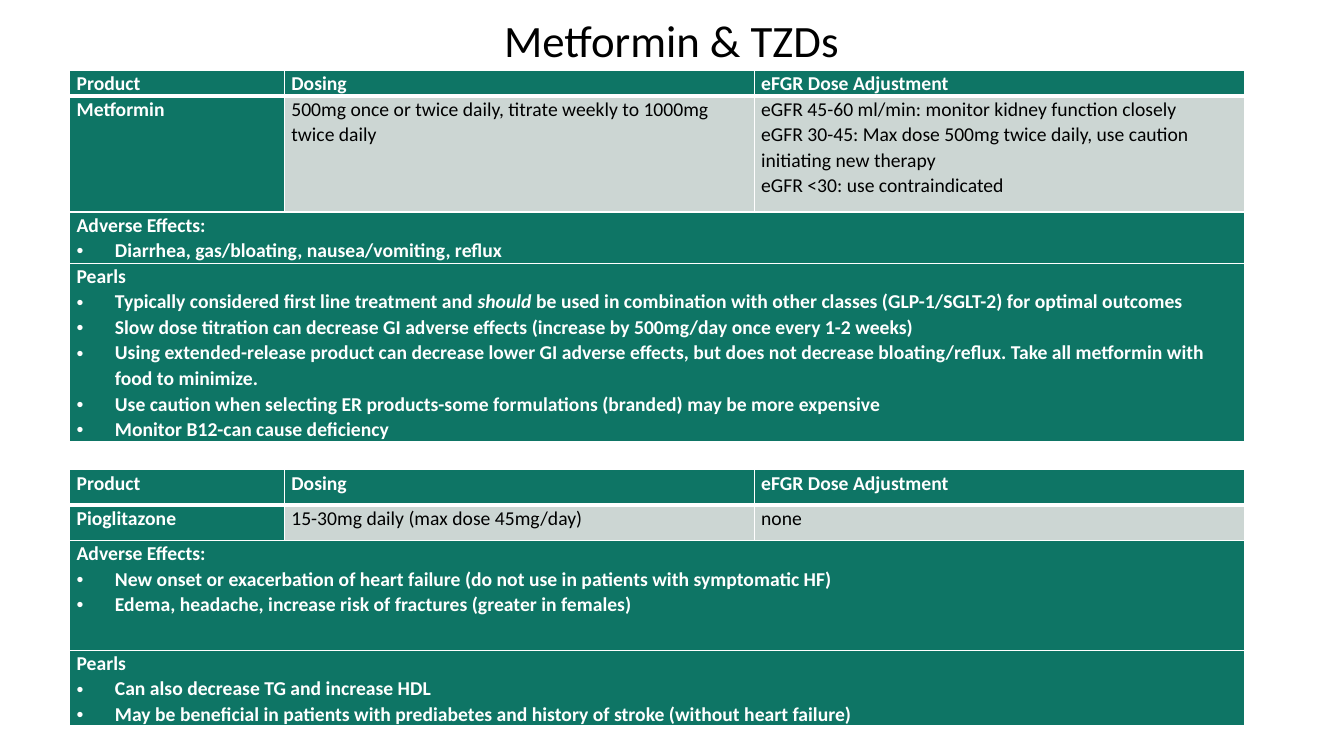
import pptx
import pptx.dml.color
import pptx.enum.text
import pptx.oxml
import pptx.oxml.ns
import pptx.util

WIDTH, HEIGHT = 13.33, 7.5
TABLE_LEFT = 0.69
COLUMNS = (2.13, 4.66, 4.86)
GREEN, GRAY, WHITE, BLACK = "0E7565", "CCD6D3", "FFFFFF", "000000"
HEADINGS = ("Product", "Dosing", "eFGR Dose Adjustment")
INDENT = pptx.util.Inches(0.38)

METFORMIN = (
    "Metformin",
    ["500mg once or twice daily, titrate weekly to 1000mg twice daily"],
    ["eGFR 45-60 ml/min: monitor kidney function closely",
     "eGFR 30-45: Max dose 500mg twice daily, use caution initiating new therapy",
     "eGFR <30: use contraindicated"],
)
METFORMIN_NOTES = {
    "Adverse Effects:": ["Diarrhea, gas/bloating, nausea/vomiting, reflux"],
    "Pearls": [
        ("Typically considered first line treatment and ", "should",
         " be used in combination with other classes (GLP-1/SGLT-2) for optimal outcomes"),
        "Slow dose titration can decrease GI adverse effects (increase by 500mg/day once every 1-2 weeks)",
        "Using extended-release product can decrease lower GI adverse effects, but does not decrease "
        "bloating/reflux. Take all metformin with food to minimize.",
        "Use caution when selecting ER products-some formulations (branded) may be more expensive",
        "Monitor B12-can cause deficiency",
    ],
}
PIOGLITAZONE = ("Pioglitazone", ["15-30mg daily (max dose 45mg/day)"], ["none"])
PIOGLITAZONE_NOTES = {
    "Adverse Effects:": [
        "New onset or exacerbation of heart failure (do not use in patients with symptomatic HF)",
        "Edema, headache, increase risk of fractures (greater in females)",
    ],
    "Pearls": [
        "Can also decrease TG and increase HDL",
        "May be beneficial in patients with prediabetes and history of stroke (without heart failure)",
    ],
}


def color(value):
    return pptx.dml.color.RGBColor.from_string(value)


def write(frame, text, first=False, size=14, ink=WHITE, bold=False,
          bullet=False, align=None, spacing=None):
    """Add one paragraph; in a tuple of spans every second one is italic."""
    para = frame.paragraphs[0] if first else frame.add_paragraph()
    para.alignment = align
    para.line_spacing = spacing
    if bullet:
        properties = para._p.get_or_add_pPr()
        properties.set("marL", str(INDENT))
        properties.set("indent", str(-INDENT))
        for tag, name, value in (("buFont", "typeface", "Arial"), ("buChar", "char", "•")):
            mark = pptx.oxml.parse_xml(f"<a:{tag} {pptx.oxml.ns.nsdecls('a')}/>")
            mark.set(name, value)
            properties.append(mark)
    for index, words in enumerate((text,) if isinstance(text, str) else text):
        span = para.add_run()
        span.text = words
        span.font.name = "Calibri"
        span.font.size = pptx.util.Pt(size)
        span.font.bold = bold
        span.font.italic = index % 2 == 1
        span.font.color.rgb = color(ink)


def set_borders(cell, top=1, bottom=1):
    properties = cell._tc.get_or_add_tcPr()
    sides = {"lnL": 1, "lnR": 1, "lnT": top, "lnB": bottom}
    for index, (side, points) in enumerate(sides.items()):
        line = pptx.oxml.parse_xml(
            f'<a:{side} {pptx.oxml.ns.nsdecls("a")} w="{pptx.util.Pt(points)}">'
            f'<a:solidFill><a:srgbClr val="{WHITE}"/></a:solidFill></a:{side}>')
        properties.insert(index, line)


def fill_cell(cell, lines, bullets=(), fill=GREEN, ink=WHITE):
    for number, line in enumerate([*lines, *bullets]):
        write(cell.text_frame, line, first=number == 0, ink=ink, bold=ink == WHITE,
              bullet=number >= len(lines), spacing=1.07)
    cell.fill.solid()
    cell.fill.fore_color.rgb = color(fill)
    cell.margin_left = cell.margin_right = pptx.util.Inches(0.07)
    cell.margin_top = cell.margin_bottom = 0


def add_drug_table(page, top, heights, drug, notes):
    inches = pptx.util.Inches
    table = page.shapes.add_table(
        len(heights), len(COLUMNS), inches(TABLE_LEFT), inches(top),
        inches(sum(COLUMNS)), inches(sum(heights))).table
    for column, width in zip(table.columns, COLUMNS):
        column.width = inches(width)
    for row, height in zip(table.rows, heights):
        row.height = inches(height)

    for column, heading in enumerate(HEADINGS):
        fill_cell(table.cell(0, column), [heading])
    name, *details = drug
    fill_cell(table.cell(1, 0), [name])
    for column, lines in enumerate(details, 1):
        fill_cell(table.cell(1, column), lines, fill=GRAY, ink=BLACK)
    for row, (heading, bullets) in enumerate(notes.items(), 2):
        table.cell(row, 0).merge(table.cell(row, len(COLUMNS) - 1))
        fill_cell(table.cell(row, 0), [heading], bullets)

    for row in range(len(heights)):
        for column in range(len(COLUMNS)):
            set_borders(table.cell(row, column), top=3 if row == 1 else 1,
                        bottom=3 if row == 0 else 1)


def add_title(page, text):
    inches = pptx.util.Inches
    box = page.shapes.add_textbox(inches(0.17), inches(0.08), inches(12.98), inches(0.64))
    box.text_frame.word_wrap = True
    write(box.text_frame, text, first=True, size=32, ink=BLACK,
          align=pptx.enum.text.PP_ALIGN.CENTER)


def main():
    deck = pptx.Presentation()
    deck.slide_width = pptx.util.Inches(WIDTH)
    deck.slide_height = pptx.util.Inches(HEIGHT)
    page = deck.slides.add_slide(deck.slide_layouts[6])
    add_drug_table(page, 0.7, (0.23, 1.15, 0.45, 1.38), METFORMIN, METFORMIN_NOTES)
    add_title(page, "Metformin & TZDs")
    add_drug_table(page, 4.66, (0.35, 0.35, 1.09, 0.72), PIOGLITAZONE, PIOGLITAZONE_NOTES)
    deck.save("out.pptx")


if __name__ == "__main__":
    main()
